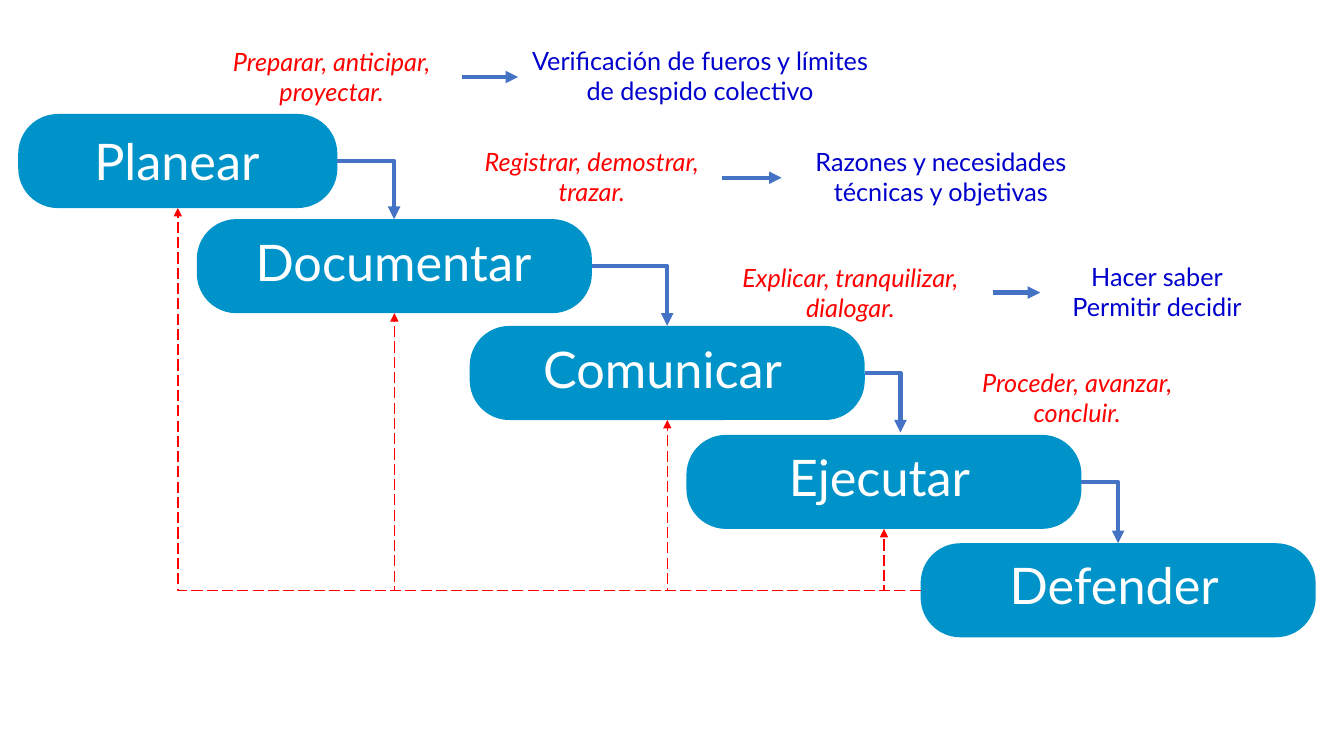
from lxml import etree
from pptx import Presentation
from pptx.dml.color import RGBColor
from pptx.enum import dml, shapes, text
from pptx.oxml import ns
from pptx.util import Pt

STEP_BLUE = RGBColor(0x00, 0x93, 0xC9)
FLOW_BLUE = RGBColor(0x44, 0x72, 0xC4)
HINT_BLUE = RGBColor(0x00, 0x00, 0xCC)
RED = RGBColor(0xFF, 0x00, 0x00)
WHITE = RGBColor(0xFF, 0xFF, 0xFF)

STEP_HEIGHT = 67.2
TEXT_HEIGHT = 51.1

STEPS = [
    ("Planear", (13, 81.4, 228), (38.9, 89.3, 175)),
    ("Documentar", (140.6, 156.5, 282.2), (159.1, 161.3, 244)),
    ("Comunicar", (335.5, 232.8, 282.2), (351.4, 237.6, 244)),
    ("Ejecutar", (490.3, 310.6, 282.2), (506.2, 315.4, 244)),
    ("Defender", (657.6, 388, 282.2), (673.9, 392.6, 244)),
]
FLOW_ENDS = [(281.5, 156.5), (476.6, 232.8), (643.2, 309), (798.7, 388)]
VERBS = [
    ("Preparar, anticipar, proyectar.", (144, 29.5, 185.8)),
    ("Registrar, demostrar, trazar.", (329.8, 101, 185.8)),
    ("Explicar, tranquilizar, dialogar.", (506.2, 183.6, 202.5)),
    ("Proceder, avanzar, concluir.", (668.2, 258.7, 202.5)),
]
HINTS = [
    ("Verificación de fueros y límites de despido colectivo", (370.1, 29, 260)),
    ("Razones y necesidades técnicas y objetivas", (558, 101, 228.2)),
    ("Hacer saber\nPermitir decidir", (743, 183.2, 167)),
]
HINT_ARROWS = [(329.8, 370.1, 55), (515.7, 558.4, 127), (709, 743, 209)]


def add_text(slide, wording, place, size=18, color=WHITE, italic=False):
    """Add centred text at (left, top, width), one paragraph per line."""
    left, top, width = place
    box = slide.shapes.add_textbox(Pt(left), Pt(top), Pt(width), Pt(TEXT_HEIGHT))
    frame = box.text_frame
    frame.word_wrap = True
    frame.auto_size = text.MSO_AUTO_SIZE.SHAPE_TO_FIT_TEXT
    frame.text = wording
    for paragraph in frame.paragraphs:
        paragraph.alignment = text.PP_ALIGN.CENTER
        for run in paragraph.runs:
            run.font.name = "Lato"
            run.font.size = Pt(size)
            run.font.italic = italic
            run.font.color.rgb = color


def add_step(slide, place):
    """Add the rounded bar of one step."""
    left, top, width = place
    bar = slide.shapes.add_shape(shapes.MSO_SHAPE.ROUNDED_RECTANGLE,
                                 Pt(left), Pt(top), Pt(width), Pt(STEP_HEIGHT))
    bar.adjustments[0] = 0.421
    bar.shadow.inherit = False
    bar.fill.solid()
    bar.fill.fore_color.rgb = STEP_BLUE
    bar.line.fill.background()


def add_arrow(slide, start, end, color=FLOW_BLUE, width=3, corner=True, dash=None, turned=False):
    """Add an elbow arrow; a turned one runs from lower right to upper left."""
    first, last = (end, start) if turned else (start, end)
    arrow = slide.shapes.add_connector(shapes.MSO_CONNECTOR.ELBOW,
                                       *(Pt(value) for value in (*first, *last)))
    arrow.line.color.rgb = color
    arrow.line.width = Pt(width)
    if dash:
        arrow.line.dash_style = dash
    properties = arrow._element.spPr
    if corner:
        properties.find(ns.qn("a:prstGeom")).set("prst", "bentConnector2")
    if turned:
        properties.find(ns.qn("a:xfrm")).set("rot", "10800000")
    etree.SubElement(properties.find(ns.qn("a:ln")), ns.qn("a:tailEnd"), type="triangle")
    etree.SubElement(properties, ns.qn("a:effectLst"))


def main():
    """Build the five-step cascade and save it."""
    deck = Presentation()
    deck.slide_width, deck.slide_height = Pt(960), Pt(540)
    slide = deck.slides.add_slide(deck.slide_layouts[6])

    for name, bar, label in STEPS:
        add_step(slide, bar)
        add_text(slide, name, label, size=36)

    half = STEP_HEIGHT / 2
    last_left, last_top, _ = STEPS[-1][1]
    for (_, (left, top, width), _), flow_end in zip(STEPS, FLOW_ENDS):
        add_arrow(slide, (left + width, top + half), flow_end)
        add_arrow(slide, (last_left, last_top + half), (left + width / 2, top + STEP_HEIGHT),
                  color=RED, width=1, dash=dml.MSO_LINE.LONG_DASH, turned=True)

    for wording, place in VERBS:
        add_text(slide, wording, place, color=RED, italic=True)
    for wording, place in HINTS:
        add_text(slide, wording, place, color=HINT_BLUE)
    for left, right, level in HINT_ARROWS:
        add_arrow(slide, (left, level), (right, level), corner=False)

    deck.save("out.pptx")


if __name__ == "__main__":
    main()
